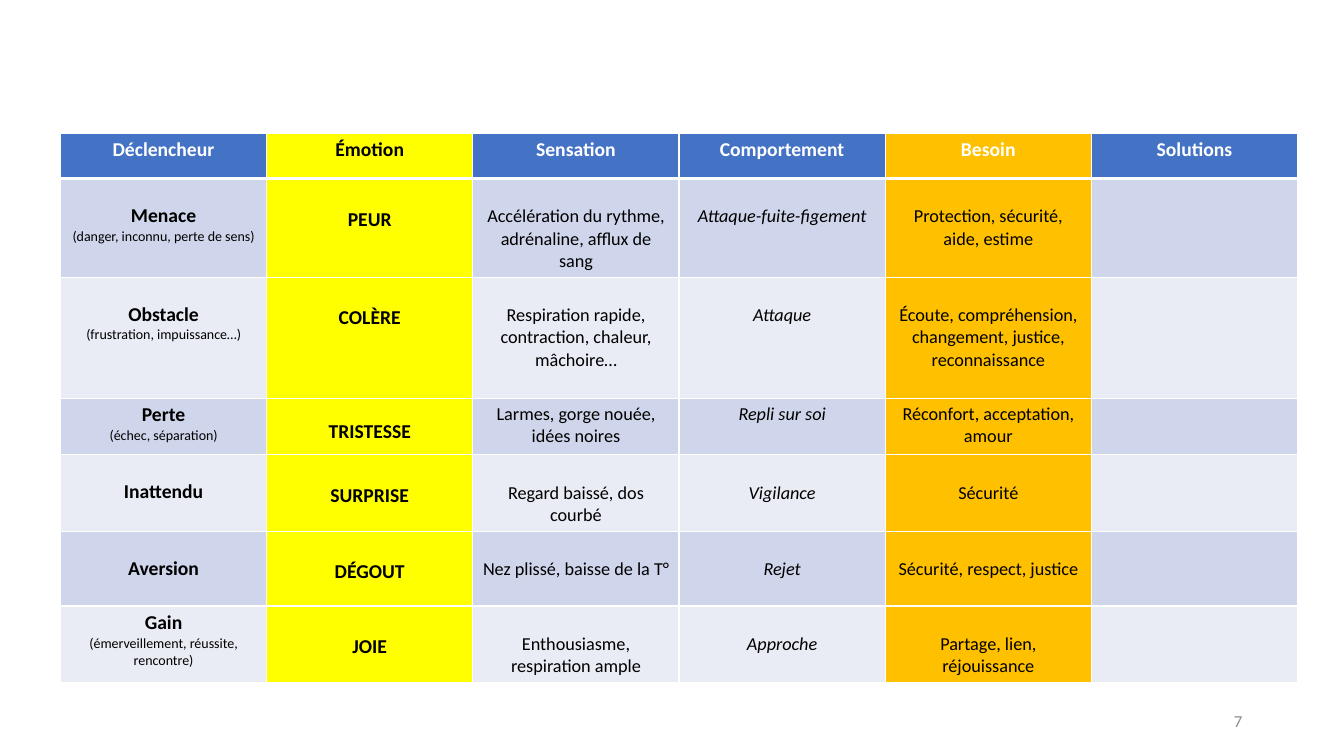
from dataclasses import dataclass
from lxml.etree import SubElement
from pptx import Presentation
from pptx.dml.color import RGBColor
from pptx.enum.text import MSO_ANCHOR, PP_ALIGN
from pptx.oxml import parse_xml
from pptx.oxml.ns import nsdecls, qn
from pptx.util import Inches, Pt


@dataclass(frozen=True)
class Theme:
    font: str = "Calibri"
    ink: str = "000000"
    white: str = "FFFFFF"
    blue: str = "4472C4"
    yellow: str = "FFFF00"
    amber: str = "FFC000"
    bands: tuple = ("CFD5EA", "E9EBF5")
    grey: str = "8C8C8C"
    head: int = 14
    body: int = 13
    note: int = 10
    page: int = 12
    thin: int = 1
    thick: int = 3


HEADS = ("Déclencheur", "Émotion", "Sensation", "Comportement", "Besoin", "Solutions")
LEADS = (12, 14, 13, 13, 13, 0)
ROWS = (
    (0.97, LEADS, ("Menace\n(danger, inconnu, perte de sens)", "PEUR",
                   "Accélération du rythme, adrénaline, afflux de sang",
                   "Attaque-fuite-figement", "Protection, sécurité, aide, estime", "")),
    (1.2, LEADS, ("Obstacle\n(frustration, impuissance…)", "COLÈRE",
                  "Respiration rapide, contraction, chaleur, mâchoire…",
                  "Attaque", "Écoute, compréhension, changement, justice, reconnaissance", "")),
    (0.56, (0, 10, 0, 0, 0, 0), ("Perte\n(échec, séparation)", "TRISTESSE",
                                 "Larmes, gorge nouée, idées noires", "Repli sur soi",
                                 "Réconfort, acceptation, amour", "")),
    (0.76, LEADS, ("Inattendu", "SURPRISE", "Regard baissé, dos courbé",
                   "Vigilance", "Sécurité", "")),
    (0.74, LEADS, ("Aversion", "DÉGOUT", "Nez plissé, baisse de la T°",
                   "Rejet", "Sécurité, respect, justice", "")),
    (0.76, (0,) + LEADS[1:], ("Gain\n(émerveillement, réussite, rencontre)", "JOIE",
                              "Enthousiasme, respiration ample", "Approche",
                              "Partage, lien, réjouissance", "")),
)


class Deck:
    """Holds the theme and the current slide, and draws its elements."""

    def __init__(self, theme):
        self.theme = theme
        self.show = Presentation()
        self.show.slide_width, self.show.slide_height = Inches(13.33), Inches(7.5)
        self.slide = self.show.slides.add_slide(self.show.slide_layouts[6])

    def style(self, para, size, color, bold=False, italic=False, align=PP_ALIGN.CENTER):
        para.alignment = align
        for run in para.runs:
            font = run.font
            font.name, font.size = self.theme.font, Pt(size)
            font.bold, font.italic = bold, italic
            font.color.rgb = RGBColor.from_string(color)

    def edge(self, cell, top, base):
        thin = self.theme.thin
        sides = (("L", thin), ("R", thin), ("T", top), ("B", base))
        for spot, (side, width) in enumerate(sides):
            line = parse_xml(f'<a:ln{side} {nsdecls("a")} w="{Pt(width)}"/>')
            fill = SubElement(line, qn("a:solidFill"))
            SubElement(fill, qn("a:srgbClr"), val=self.theme.white)
            cell._tc.get_or_add_tcPr().insert(spot, line)

    def cell(self, cell, text, fill, lead=0):
        cell.text_frame.text = text
        cell.margin_top = Inches(0.05) + Pt(lead * 1.22)
        cell.fill.solid()
        cell.fill.fore_color.rgb = RGBColor.from_string(fill)

    def table(self, left, top, width, heads, rows):
        theme = self.theme
        tall = (0.45,) + tuple(row[0] for row in rows)
        frame = self.slide.shapes.add_table(
            len(tall), len(heads), Inches(left), Inches(top),
            Inches(width * len(heads)), Inches(sum(tall)))
        table = frame.table
        table.horz_banding = False
        for col in table.columns:
            col.width = Inches(width)
        for row, height in zip(table.rows, tall):
            row.height = Inches(height)
        accent = {1: theme.yellow, 4: theme.amber}
        for col, text in enumerate(heads):
            cell = table.cell(0, col)
            self.cell(cell, text, accent.get(col, theme.blue))
            self.edge(cell, theme.thin, theme.thick)
            color = theme.ink if col == 1 else theme.white
            self.style(cell.text_frame.paragraphs[0], theme.head, color, bold=True)
        for row, (_, leads, texts) in enumerate(rows, 1):
            band = theme.bands[(row - 1) % 2]
            for col, (text, lead) in enumerate(zip(texts, leads)):
                cell = table.cell(row, col)
                self.cell(cell, text, accent.get(col, band), lead)
                self.edge(cell, theme.thick if row == 1 else theme.thin, theme.thin)
                for rank, para in enumerate(cell.text_frame.paragraphs):
                    bold = col < 2 and rank == 0
                    size = theme.note if rank else theme.head if bold else theme.body
                    self.style(para, size, theme.ink, bold, italic=col == 3)

    def number(self, left, top, width, height, text):
        box = self.slide.shapes.add_textbox(
            Inches(left), Inches(top), Inches(width), Inches(height))
        frame = box.text_frame
        frame.word_wrap = True
        frame.vertical_anchor = MSO_ANCHOR.MIDDLE
        frame.text = text
        self.style(frame.paragraphs[0], self.theme.page, self.theme.grey,
                   align=PP_ALIGN.RIGHT)


def main():
    deck = Deck(Theme())
    deck.table(0.6, 1.32, 2.045, HEADS, ROWS)
    deck.number(9.42, 6.95, 3, 0.4, "7")
    deck.show.save("out.pptx")


if __name__ == "__main__":
    main()
